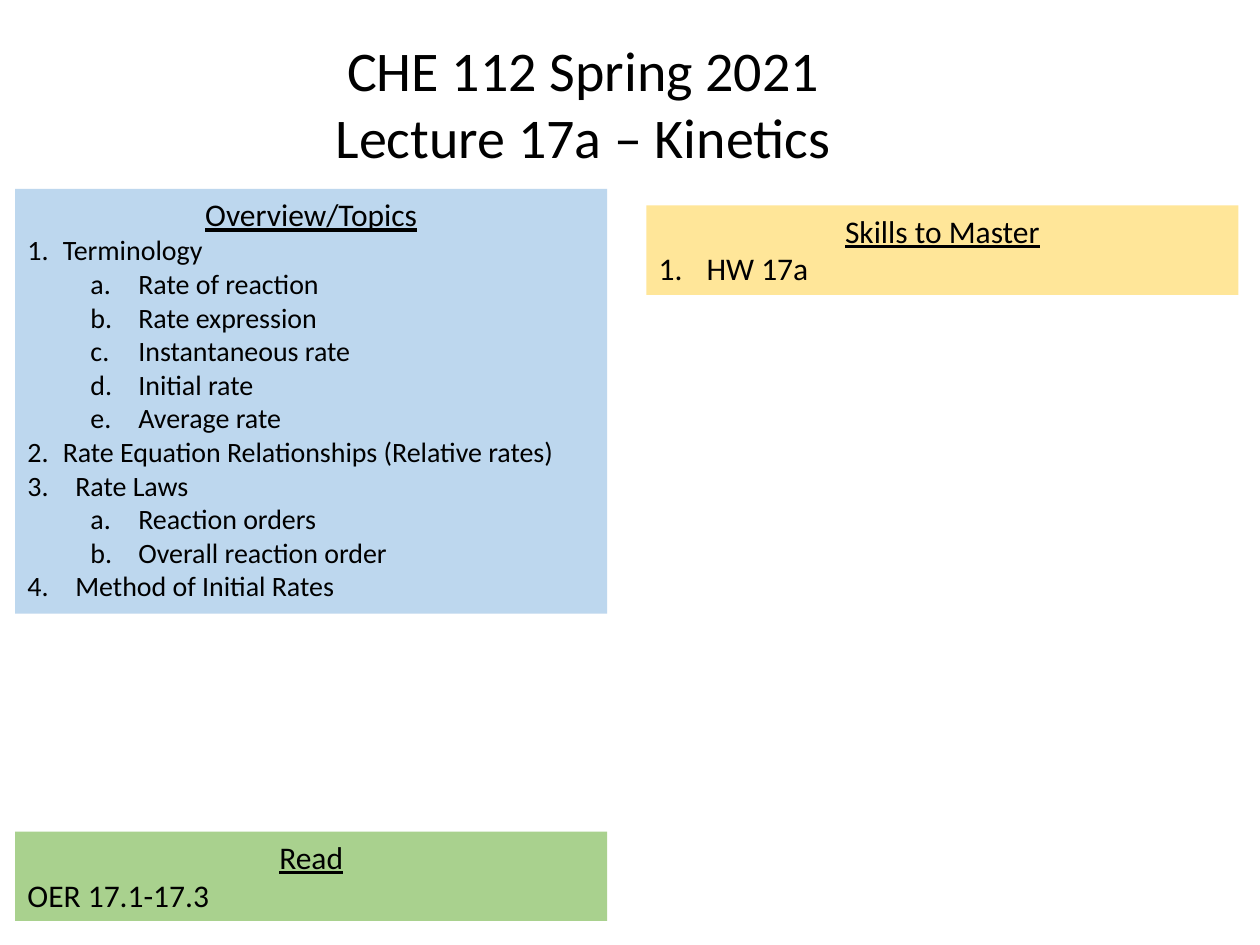
from dataclasses import dataclass
from lxml.etree import SubElement as Sub
from pptx import Presentation as Deck
from pptx.dml.color import RGBColor as Color
from pptx.enum.text import MSO_AUTO_SIZE as Fit, PP_ALIGN as Align
from pptx.oxml.ns import qn
from pptx.util import Inches, Pt


@dataclass(frozen=True)
class Theme:
    font: str = "Calibri"
    ink: str = "000000"
    blue: str = "BDD7EE"
    gold: str = "FFE699"
    green: str = "A9D18E"
    title: int = 32
    head: int = 18
    item: int = 16


T = Theme()
WIDE, HIGH = 10, 7.5
EDGE, COL, GAP = 0.12, 4.7, 0.31

STYLES = {
    "tight": (0, 0.28, 0.28, "arabicPeriod"),
    "main": (0, 0.38, 0.38, "arabicPeriod"),
    "sub": (1, 0.88, 0.38, "alphaLcPeriod"),
    "plain": None,
}
TITLE = ["CHE 112 Spring 2021", "Lecture 17a – Kinetics"]
TOPICS = [
    ("tight", "Terminology"),
    ("sub", "Rate of reaction"),
    ("sub", "Rate expression"),
    ("sub", "Instantaneous rate"),
    ("sub", "Initial rate"),
    ("sub", "Average rate"),
    ("tight", "Rate Equation Relationships (Relative rates)"),
    ("main", "Rate Laws"),
    ("sub", "Reaction orders"),
    ("sub", "Overall reaction order"),
    ("main", "Method of Initial Rates"),
]
PANELS = [
    ("Overview/Topics", TOPICS, T.item, T.blue, 0, 1.5, 3.37),
    ("Skills to Master", [("main", "HW 17a")], T.head, T.gold, 1, 1.63, 0.71),
    ("Read", [("plain", "OER 17.1-17.3")], T.head, T.green, 0, 6.6, 0.71),
]


def add_box(slide, left, top, width, height, wrap=True):
    box = slide.shapes.add_textbox(*map(Inches, (left, top, width, height)))
    box.text_frame.word_wrap = wrap
    box.text_frame.auto_size = Fit.SHAPE_TO_FIT_TEXT
    return box


def add_line(frame, text, size, first=False, mid=False, under=False):
    para = frame.paragraphs[0] if first else frame.add_paragraph()
    para.alignment = Align.CENTER if mid else Align.LEFT
    run = para.add_run()
    run.text = text
    font = run.font
    font.name, font.size, font.underline = T.font, Pt(size), under
    font.color.rgb = Color.from_string(T.ink)
    return para


def number(para, level, left, hang, kind):
    para.level = level
    props = para._p.get_or_add_pPr()
    props.set("marL", str(Inches(left)))
    props.set("indent", str(-Inches(hang)))
    Sub(props, qn("a:buFont"), typeface="+mj-lt")
    Sub(props, qn("a:buAutoNum"), type=kind)


def add_panel(slide, head, items, size, fill, col, top, height):
    box = add_box(slide, EDGE + col * (COL + GAP), top, COL, height)
    box.fill.solid()
    box.fill.fore_color.rgb = Color.from_string(fill)
    frame = box.text_frame
    add_line(frame, head, T.head, first=True, mid=True, under=True)
    for style, text in items:
        para = add_line(frame, text, size)
        if STYLES[style]:
            number(para, *STYLES[style])


def main():
    deck = Deck()
    deck.slide_width, deck.slide_height = Inches(WIDE), Inches(HIGH)
    slide = deck.slides.add_slide(deck.slide_layouts[6])
    for panel in PANELS:
        add_panel(slide, *panel)
    frame = add_box(slide, 2.49, 0.23, 4.28, 1.18, wrap=False).text_frame
    for row, text in enumerate(TITLE):
        add_line(frame, text, T.title, first=row == 0, mid=True)
    deck.save("out.pptx")


if __name__ == "__main__":
    main()
